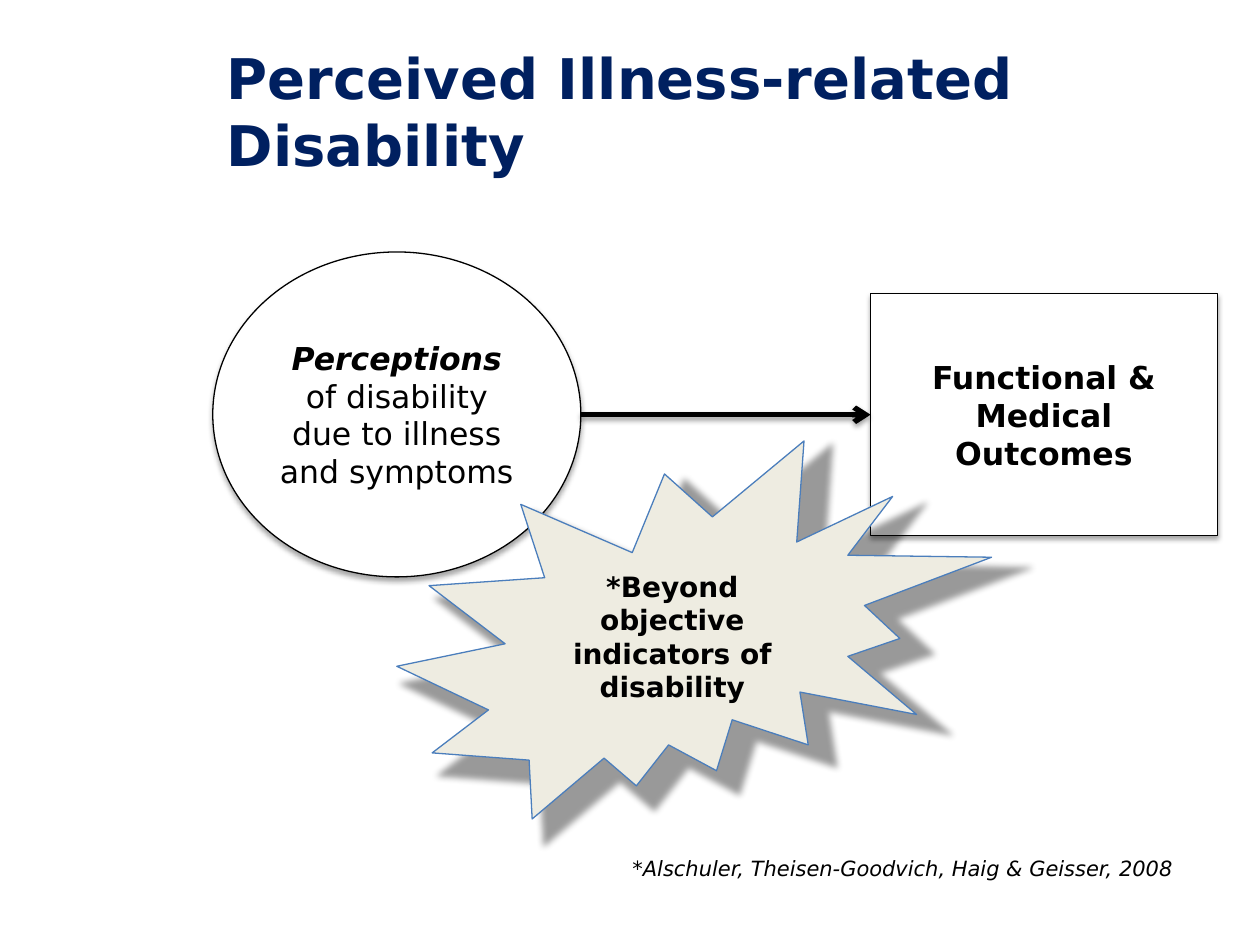
from dataclasses import dataclass

from lxml import etree
from pptx import Presentation
from pptx.dml.color import RGBColor
from pptx.enum.shapes import MSO_CONNECTOR, MSO_SHAPE
from pptx.enum.text import MSO_ANCHOR, MSO_AUTO_SIZE, PP_ALIGN
from pptx.oxml.ns import qn
from pptx.util import Cm, Pt

ELLIPSE, RECTANGLE, BURST = MSO_SHAPE.OVAL, MSO_SHAPE.RECTANGLE, MSO_SHAPE.EXPLOSION2
STRAIGHT = MSO_CONNECTOR.STRAIGHT
MIDDLE = MSO_ANCHOR.MIDDLE
LEFT, CENTER = PP_ALIGN.LEFT, PP_ALIGN.CENTER
NO_FIT, GROW = MSO_AUTO_SIZE.NONE, MSO_AUTO_SIZE.SHAPE_TO_FIT_TEXT
TITLE_ONLY = 5


@dataclass(frozen=True)
class Theme:
    """Fonts, colours and type sizes of the slide."""
    font: str = "DejaVu Sans"
    title: str = "002060"
    ink: str = "000000"
    paper: str = "FFFFFF"
    burst: str = "EEECE1"
    burst_edge: str = "4B7EBC"
    title_size: int = 32
    concept_size: int = 18
    burst_size: int = 16
    citation_size: int = 12
    edge: float = 0.75
    arrow: float = 3


@dataclass(frozen=True)
class Shadow:
    """An outer shadow: lengths in points, angle in degrees, the rest in percent."""
    opacity: int
    blur: float
    distance: float
    angle: int
    scale: int = 100


@dataclass(frozen=True)
class Box:
    """A region of the slide in centimetres."""
    left: float
    top: float
    width: float
    height: float

    @property
    def right(self):
        """Return the right edge."""
        return self.left + self.width

    @property
    def middle(self):
        """Return the height of the horizontal centre line."""
        return self.top + self.height / 2

    def lengths(self):
        """Return the region as slide lengths."""
        return Cm(self.left), Cm(self.top), Cm(self.width), Cm(self.height)


THEME = Theme()
CONCEPT_SHADOW = Shadow(35, 3.1, 1.8, 90)
ARROW_SHADOW = Shadow(38, 3.1, 1.6, 90)
BURST_SHADOW = Shadow(40, 4, 3, 45, 106)


def add_run(paragraph, text, size, color=THEME.ink, bold=False, italic=False):
    """Append one formatted run to a paragraph."""
    run = paragraph.add_run()
    run.text = text
    font = run.font
    font.name, font.size = THEME.font, Pt(size)
    font.bold, font.italic = bold, italic
    font.color.rgb = RGBColor.from_string(color)


def cast_shadow(properties, shadow):
    """Give shape properties an outer shadow."""
    effects = properties.find(qn("a:effectLst"))
    if effects is None:
        effects = etree.SubElement(properties, qn("a:effectLst"))
    outer = etree.SubElement(
        effects, qn("a:outerShdw"),
        blurRad=str(Pt(shadow.blur)), dist=str(Pt(shadow.distance)),
        dir=str(shadow.angle * 60000), sx=str(shadow.scale * 1000),
        sy=str(shadow.scale * 1000), algn="tl", rotWithShape="0")
    color = etree.SubElement(outer, qn("a:srgbClr"), val=THEME.ink)
    etree.SubElement(color, qn("a:alpha"), val=str(shadow.opacity * 1000))


def add_figure(slide, box, outline, fill, edge, shadow, size, paragraphs):
    """Draw a shape whose paragraphs are lists of (text, bold, italic)."""
    figure = slide.shapes.add_shape(outline, *box.lengths())
    figure.fill.solid()
    figure.fill.fore_color.rgb = RGBColor.from_string(fill)
    figure.line.color.rgb = RGBColor.from_string(edge)
    figure.line.width = Pt(THEME.edge)
    figure.shadow.inherit = False
    cast_shadow(figure._element.spPr, shadow)
    frame = figure.text_frame
    frame.word_wrap, frame.vertical_anchor = True, MIDDLE
    for index, runs in enumerate(paragraphs):
        paragraph = frame.add_paragraph() if index else frame.paragraphs[0]
        paragraph.alignment = CENTER
        for text, bold, italic in runs:
            add_run(paragraph, text, size, bold=bold, italic=italic)


def add_title(slide, box):
    """Place and format the slide title."""
    title = slide.shapes.title
    title.left, title.top, title.width, title.height = box.lengths()
    frame = title.text_frame
    frame.word_wrap, frame.auto_size, frame.vertical_anchor = True, NO_FIT, MIDDLE
    frame.paragraphs[0].alignment = LEFT
    add_run(frame.paragraphs[0], "Perceived Illness-related Disability",
            THEME.title_size, THEME.title, bold=True)


def add_arrow(slide, source, target):
    """Link the right side of one region to the left side of another."""
    arrow = slide.shapes.add_connector(
        STRAIGHT, Cm(source.right), Cm(target.middle), Cm(target.left), Cm(target.middle))
    arrow.line.color.rgb = RGBColor.from_string(THEME.ink)
    arrow.line.width = Pt(THEME.arrow)
    properties = arrow._element.spPr
    etree.SubElement(properties.find(qn("a:ln")), qn("a:tailEnd"), type="arrow")
    cast_shadow(properties, ARROW_SHADOW)


def add_model(slide, perceptions, outcomes):
    """Draw the two concepts and the arrow between them."""
    look = (THEME.paper, THEME.ink, CONCEPT_SHADOW, THEME.concept_size)
    add_figure(slide, outcomes, RECTANGLE, *look,
               [[("Functional & Medical", True, False)], [("Outcomes", True, False)]])
    add_figure(slide, perceptions, ELLIPSE, *look,
               [[("Perceptions", True, True),
                 (" of disability due to illness and symptoms", False, False)]])
    add_arrow(slide, perceptions, outcomes)


def add_remark(slide, box):
    """Draw the burst with its remark."""
    add_figure(slide, box, BURST, THEME.burst, THEME.burst_edge, BURST_SHADOW,
               THEME.burst_size,
               [[("*Beyond objective indicators of disability", True, False)]])


def add_citation(slide, box):
    """Write the source of the remark."""
    frame = slide.shapes.add_textbox(*box.lengths()).text_frame
    frame.word_wrap, frame.auto_size = False, GROW
    add_run(frame.paragraphs[0], "*Alschuler, Theisen-Goodvich, Haig & Geisser, 2008",
            THEME.citation_size, italic=True)


def main():
    """Build and save the slide."""
    deck = Presentation()
    deck.slide_width, deck.slide_height = Cm(25.4), Cm(19.05)
    slide = deck.slides.add_slide(deck.slide_layouts[TITLE_ONLY])
    add_title(slide, Box(4.32, 0.64, 19.38, 3.18))
    add_model(slide, Box(4.29, 5.08, 7.42, 6.55), Box(17.55, 5.92, 6.99, 4.88))
    add_remark(slide, Box(8, 8.89, 11.99, 7.62))
    add_citation(slide, Box(12.5, 17.12, 11.73, 0.76))
    deck.save("out.pptx")


if __name__ == "__main__":
    main()
